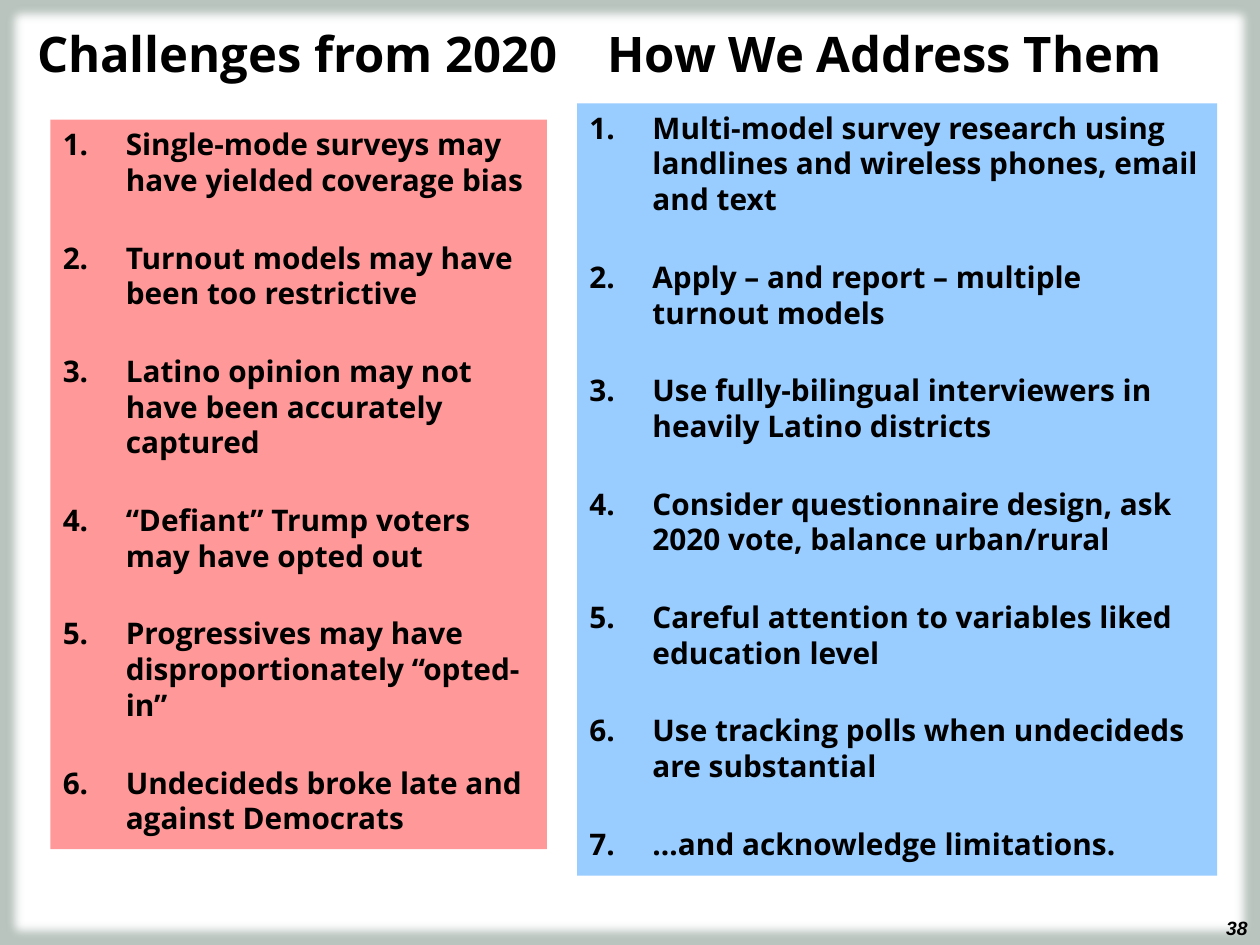
from lxml import etree
from pptx import Presentation
from pptx.dml.color import RGBColor
from pptx.enum.shapes import MSO_SHAPE
from pptx.enum.text import MSO_ANCHOR, PP_ALIGN
from pptx.oxml.ns import qn
from pptx.util import Inches, Pt

RECTANGLE = MSO_SHAPE.RECTANGLE
TOP, MIDDLE = MSO_ANCHOR.TOP, MSO_ANCHOR.MIDDLE
LEFT, CENTER, RIGHT = PP_ALIGN.LEFT, PP_ALIGN.CENTER, PP_ALIGN.RIGHT
BLACK = RGBColor(0x00, 0x00, 0x00)
WHITE = RGBColor(0xFF, 0xFF, 0xFF)
SAGE = RGBColor(0xB9, 0xC4, 0xBE)
DARK_SAGE = RGBColor(0x4C, 0x5B, 0x53)
PINK = RGBColor(0xFF, 0x99, 0x99)
BLUE = RGBColor(0x99, 0xCC, 0xFF)

# heading, heading left, list position (left, top, width, height), fill, items
COLUMNS = [
    ("Challenges from 2020", -0.32, (0.4, 0.95, 3.94, 5.79), PINK, [
        "Single-mode surveys may have yielded coverage bias",
        "Turnout models may have been too restrictive",
        "Latino opinion may not have been accurately captured",
        "“Defiant” Trump voters may have opted out",
        "Progressives may have disproportionately “opted-in”",
        "Undecideds broke late and against Democrats",
    ]),
    ("How We Address Them", 4.34, (4.58, 0.82, 5.08, 6.13), BLUE, [
        "Multi-model survey research using landlines and wireless phones, email and text",
        "Apply – and report – multiple turnout models",
        "Use fully-bilingual interviewers in heavily Latino districts",
        "Consider questionnaire design, ask 2020 vote, balance urban/rural",
        "Careful attention to variables liked education level",
        "Use tracking polls when undecideds are substantial",
        "…and acknowledge limitations.",
    ]),
]


def add_bold_run(paragraph, text, size, font_name="Open Sans"):
    run = paragraph.add_run()
    run.text = text
    run.font.name = font_name
    run.font.size = Pt(size)
    run.font.bold = True
    run.font.color.rgb = BLACK
    return run


def number_paragraph(paragraph):
    """Give the paragraph automatic 1. 2. 3. numbering with a hanging indent."""
    properties = paragraph._p.get_or_add_pPr()
    properties.set("marL", str(Inches(0.5)))
    properties.set("indent", str(Inches(-0.5)))
    etree.SubElement(properties, qn("a:buFont"), typeface="Open Sans")
    etree.SubElement(properties, qn("a:buAutoNum"), type="arabicPeriod")


presentation = Presentation()
presentation.slide_width = Inches(10)
presentation.slide_height = Inches(7.5)
slide = presentation.slides.add_slide(presentation.slide_layouts[6])
slide.background.fill.solid()
slide.background.fill.fore_color.rgb = SAGE

# White page with soft edges
page = slide.shapes.add_shape(RECTANGLE, Inches(0.04), Inches(0.03), Inches(9.92), Inches(7.45))
page.shadow.inherit = False
page.fill.solid()
page.fill.fore_color.rgb = WHITE
page.line.color.rgb = DARK_SAGE
page.line.width = Pt(1.5)
effects = page._element.spPr.find(qn("a:effectLst"))
etree.SubElement(effects, qn("a:softEdge"), rad=str(Pt(5)))

# Page number
page_number = slide.shapes.add_textbox(Inches(8.73), Inches(7.22), Inches(1.27), Inches(0.28))
page_number.text_frame.word_wrap = True
page_number.text_frame.vertical_anchor = MIDDLE
number_line = page_number.text_frame.paragraphs[0]
number_line.alignment = RIGHT
add_bold_run(number_line, "38", 11, "Arial").font.italic = True

# Headings and numbered lists
for title, title_left, position, color, items in COLUMNS:
    heading = slide.shapes.add_textbox(Inches(title_left), Inches(0.22), Inches(5.36), Inches(0.6))
    heading.text_frame.word_wrap = True
    heading.text_frame.vertical_anchor = TOP
    heading.text_frame.margin_top = Inches(0.02)
    heading_line = heading.text_frame.paragraphs[0]
    heading_line.alignment = CENTER
    heading_line.line_spacing = 0.9
    add_bold_run(heading_line, title, 28)

    panel = slide.shapes.add_shape(RECTANGLE, *[Inches(length) for length in position])
    panel.shadow.inherit = False
    panel.fill.solid()
    panel.fill.fore_color.rgb = color
    panel.line.fill.background()
    frame = panel.text_frame
    frame.word_wrap = True
    frame.vertical_anchor = TOP
    for index, item in enumerate(items):
        paragraph = frame.add_paragraph() if index else frame.paragraphs[0]
        paragraph.alignment = LEFT
        paragraph.space_before = Pt(12 if index else 0)
        paragraph.space_after = Pt(12)
        number_paragraph(paragraph)
        add_bold_run(paragraph, item, 17)

presentation.save("out.pptx")
